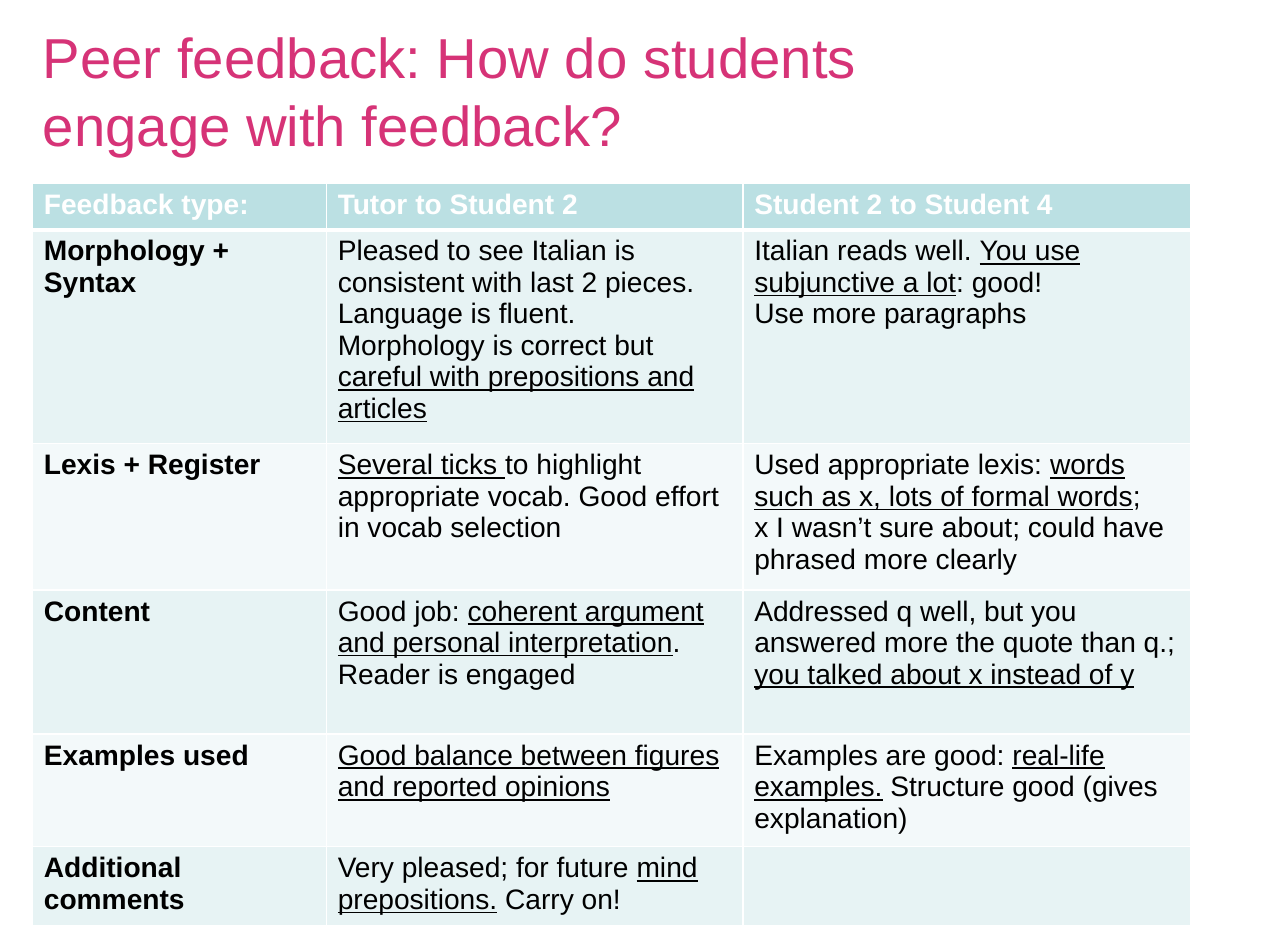
from lxml import etree
from pptx import Presentation
from pptx.dml.color import RGBColor
from pptx.enum.text import MSO_ANCHOR, PP_ALIGN
from pptx.oxml.ns import qn
from pptx.util import Inches, Pt

MIDDLE = MSO_ANCHOR.MIDDLE
LEFT = PP_ALIGN.LEFT

HEADING = "Peer feedback: How do students engage with feedback?"
# Underscores enclose underlined words.
FEEDBACK = [
    ("Feedback type:", "Tutor to Student 2", "Student 2 to Student 4"),
    ("Morphology + Syntax",
     "Pleased to see Italian is consistent with last 2 pieces. Language is fluent.\n"
     "Morphology is correct but _careful with prepositions and articles_",
     "Italian reads well. _You use subjunctive a lot_: good!\nUse more paragraphs"),
    ("Lexis + Register",
     "_Several ticks _to highlight appropriate vocab. Good effort in vocab selection",
     "Used appropriate lexis: _words such as x, lots of formal words_;\n"
     "x I wasn’t sure about; could have phrased more clearly"),
    ("Content",
     "Good job: _coherent argument and personal interpretation_. Reader is engaged",
     "Addressed q well, but you answered more the quote than q.; "
     "_you talked about x instead of y_"),
    ("Examples used",
     "_Good balance between figures and reported opinions_",
     "Examples are good: _real-life examples._ Structure good (gives explanation)"),
    ("Additional comments",
     "Very pleased; for future _mind prepositions._ Carry on!",
     ""),
]
COLUMN_WIDTHS = [2.61, 3.7, 3.98]
ROW_HEIGHTS = [0.41, 1.9, 1.3, 1.28, 1, 0.7]
HEADER_FILL = "BBE0E3"
BAND_FILLS = ["F3F9FA", "E7F3F4"]
WHITE, BLACK, PINK = "FFFFFF", "000000", "D63377"


def color(value):
    return RGBColor.from_string(value)


def set_font(font, size, value, bold=False):
    font.name = "Arial"
    font.size = Pt(size)
    font.bold = bold
    font.color.rgb = color(value)


def write_feedback(cell, text, value, bold):
    frame = cell.text_frame
    for number, line in enumerate(text.split("\n")):
        paragraph = frame.add_paragraph() if number else frame.paragraphs[0]
        set_font(paragraph.font, 18, value, bold)
        for position, words in enumerate(line.split("_")):
            if words:
                run = paragraph.add_run()
                run.text = words
                if position % 2:
                    run.font.underline = True


def set_borders(cell, top, bottom):
    properties = cell._tc.get_or_add_tcPr()
    widths = {"a:lnL": 1, "a:lnR": 1, "a:lnT": top, "a:lnB": bottom}
    for index, (side, width) in enumerate(widths.items()):
        line = etree.Element(qn(side), w=str(Pt(width)))
        fill = etree.SubElement(line, qn("a:solidFill"))
        etree.SubElement(fill, qn("a:srgbClr"), val=WHITE)
        properties.insert(index, line)


def main():
    prs = Presentation()
    prs.slide_width, prs.slide_height = Inches(11.44), Inches(8.27)
    slide = prs.slides.add_slide(prs.slide_layouts[5])

    title = slide.shapes.title
    title.left, title.top = Inches(0.29), Inches(0.15)
    title.width, title.height = Inches(8.75), Inches(1.3)
    frame = title.text_frame
    frame.text = HEADING
    frame.word_wrap = True
    frame.vertical_anchor = MIDDLE
    frame.margin_left = frame.margin_right = Inches(0.09)
    frame.margin_top = frame.margin_bottom = Inches(0.04)
    frame.paragraphs[0].alignment = LEFT
    set_font(frame.paragraphs[0].font, 36, PINK)

    table = slide.shapes.add_table(
        len(FEEDBACK), len(COLUMN_WIDTHS), Inches(0.29), Inches(1.63),
        Inches(sum(COLUMN_WIDTHS)), Inches(sum(ROW_HEIGHTS))).table
    for column, width in zip(table.columns, COLUMN_WIDTHS):
        column.width = Inches(width)
    for r, (row, height, texts) in enumerate(zip(table.rows, ROW_HEIGHTS, FEEDBACK)):
        row.height = Inches(height)
        for c, (cell, text) in enumerate(zip(row.cells, texts)):
            cell.margin_left = cell.margin_right = Inches(0.1)
            cell.margin_top = cell.margin_bottom = Inches(0.05)
            cell.fill.solid()
            cell.fill.fore_color.rgb = color(BAND_FILLS[r % 2] if r else HEADER_FILL)
            set_borders(cell, 3 if r == 1 else 1, 1 if r else 3)
            write_feedback(cell, text, BLACK if r else WHITE, r == 0 or c == 0)

    prs.save("out.pptx")


if __name__ == "__main__":
    main()
